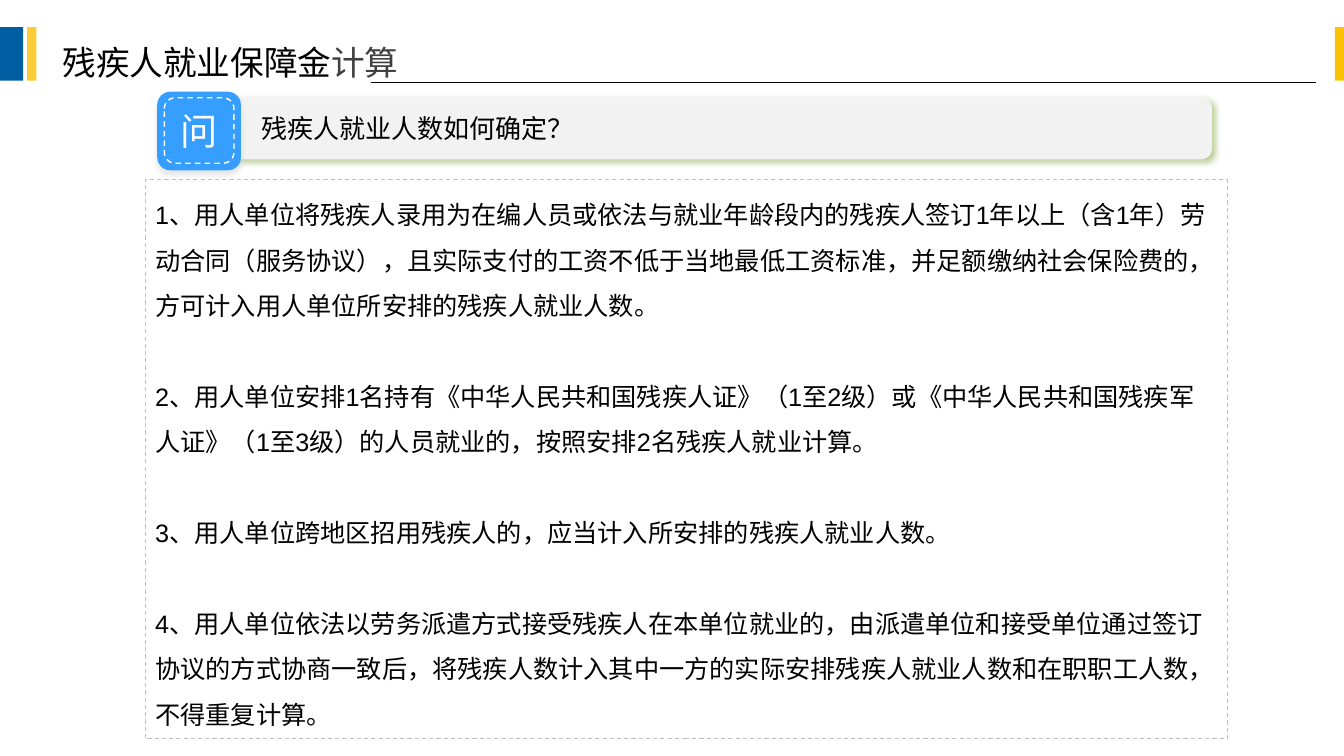
from pptx import Presentation
from pptx.dml.color import RGBColor
from pptx.enum.dml import MSO_LINE_DASH_STYLE as Dash
from pptx.enum.shapes import MSO_CONNECTOR as Link, MSO_SHAPE as Form
from pptx.enum.text import MSO_ANCHOR as Anchor, MSO_AUTO_SIZE as Fit, PP_ALIGN as Align
from pptx.oxml import parse_xml
from pptx.oxml.ns import nsdecls, qn
from pptx.util import Inches, Pt

COLORS = {
    "black": "000000", "white": "FFFFFF", "ash": "404040",
    "navy": "005DA2", "yellow": "FDCD35", "gold": "FBC203",
    "blue": "359EFF", "pale": "F2F2F2", "gray": "BFBFBF", "olive": "62870A",
}
POINTS = [
    "1、用人单位将残疾人录用为在编人员或依法与就业年龄段内的残疾人签订1年以上（含1年）劳动合同（服务协议），且实际支付的工资不低于当地最低工资标准，并足额缴纳社会保险费的，方可计入用人单位所安排的残疾人就业人数。",
    "2、用人单位安排1名持有《中华人民共和国残疾人证》（1至2级）或《中华人民共和国残疾军人证》（1至3级）的人员就业的，按照安排2名残疾人就业计算。",
    "3、用人单位跨地区招用残疾人的，应当计入所安排的残疾人就业人数。",
    "4、用人单位依法以劳务派遣方式接受残疾人在本单位就业的，由派遣单位和接受单位通过签订协议的方式协商一致后，将残疾人数计入其中一方的实际安排残疾人就业人数和在职职工人数，不得重复计算。",
]


class Deck:
    font = "Arial"

    def __init__(self):
        self.show = Presentation()
        self.show.slide_width = Inches(13.33)
        self.show.slide_height = Inches(7.5)
        self.slide = self.show.slides.add_slide(self.show.slide_layouts[1])

    def color(self, name):
        return RGBColor.from_string(COLORS[name])

    def across(self, share):
        return int(self.show.slide_width * share / 100)

    def down(self, share):
        return int(self.show.slide_height * share / 100)

    def area(self, left, top, width, height):
        return self.across(left), self.down(top), self.across(width), self.down(height)

    def place(self, item, box):
        item.left, item.top, item.width, item.height = self.area(*box)

    def style(self, font, size, color="black"):
        font.name = self.font
        font.size = Pt(size)
        font.color.rgb = self.color(color)

    def dash(self, line, color, width):
        line.color.rgb = self.color(color)
        line.width = Pt(width)
        line.dash_style = Dash.DASH

    def title(self, box, *parts):
        title = self.slide.shapes.title
        self.place(title, box)
        frame = title.text_frame
        frame.auto_size = Fit.NONE
        frame.vertical_anchor = Anchor.MIDDLE
        line = frame.paragraphs[0]
        line.alignment = Align.LEFT
        for text, color in parts:
            run = line.add_run()
            run.text = text
            self.style(run.font, 24, color)

    def body(self, box, points):
        body = self.slide.placeholders[1]
        self.place(body, box)
        self.dash(body.line, "gray", 0.75)
        frame = body.text_frame
        frame.text = "\n".join(points)
        frame.auto_size = Fit.NONE
        frame.vertical_anchor = Anchor.TOP
        for line in frame.paragraphs:
            self.style(line.font, 18)
            line.alignment = Align.LEFT
            line.line_spacing = 1.5
            line.space_before = Pt(0)
            line.space_after = Pt(0 if line.text == points[-1] else 32.5)
            props = line._p.get_or_add_pPr()
            props.set("marL", "0")
            props.set("indent", "0")
            props.insert_element_before(
                parse_xml(f"<a:buNone {nsdecls('a')}/>"), "a:tabLst", "a:defRPr", "a:extLst")

    def shape(self, form, box, fill=None):
        item = self.slide.shapes.add_shape(form, *self.area(*box))
        if fill:
            item.fill.solid()
            item.fill.fore_color.rgb = self.color(fill)
        else:
            item.fill.background()
        item.line.fill.background()
        item.shadow.inherit = False
        return item

    def shade(self, item, color, angle):
        item._element.spPr.find(qn("a:effectLst")).append(parse_xml(
            f'<a:outerShdw {nsdecls("a")} blurRad="{Pt(4)}" dist="{Pt(3)}" '
            f'dir="{angle * 60000}" algn="ctr" rotWithShape="0">'
            f'<a:srgbClr val="{COLORS[color]}"><a:alpha val="40000"/></a:srgbClr>'
            '</a:outerShdw>'))

    def label(self, item, text, size, color="black", align=Align.LEFT, inset=0):
        frame = item.text_frame
        frame.word_wrap = True
        frame.vertical_anchor = Anchor.MIDDLE
        frame.margin_left = self.across(inset)
        frame.margin_right = frame.margin_top = frame.margin_bottom = 0
        line = frame.paragraphs[0]
        line.text = text
        line.alignment = align
        self.style(line.font, size, color)

    def rule(self, start, end, row):
        line = self.slide.shapes.add_connector(
            Link.STRAIGHT, self.across(start), self.down(row),
            self.across(end), self.down(row))
        line.line.color.rgb = self.color("black")
        line.line.width = Pt(0.75)
        line._element.spPr.append(parse_xml(f"<a:effectLst {nsdecls('a')}/>"))


def main():
    deck = Deck()
    deck.rule(97.9, 27.61, 10.93)
    for left, width, color in [(0, 1.73, "navy"), (2.03, 0.68, "yellow"), (99.32, 0.68, "gold")]:
        deck.shape(Form.RECTANGLE, (left, 3.6, width, 7.07), color)

    deck.title((3.9, 4.93, 30.31, 6.67), ("残疾人就业保障金", "black"), ("计算", "ash"))
    deck.body((10.8, 23.73, 80.5, 74), POINTS)

    bar = deck.shape(Form.FLOWCHART_ALTERNATE_PROCESS, (14.85, 12.8, 75.32, 8.27), "pale")
    deck.shade(bar, "olive", 45)
    deck.label(bar, "残疾人就业人数如何确定？", 18.6, inset=4.35)

    badge = deck.shape(Form.ROUNDED_RECTANGLE, (11.7, 12.13, 6.23, 10.4), "blue")
    deck.shade(badge, "gray", 90)
    frame = deck.shape(Form.ROUNDED_RECTANGLE, (12.23, 12.93, 5.18, 8.67))
    deck.dash(frame.line, "white", 1)
    deck.label(frame, "问", 26.6, "white", Align.CENTER)

    deck.show.save("out.pptx")


if __name__ == "__main__":
    main()
